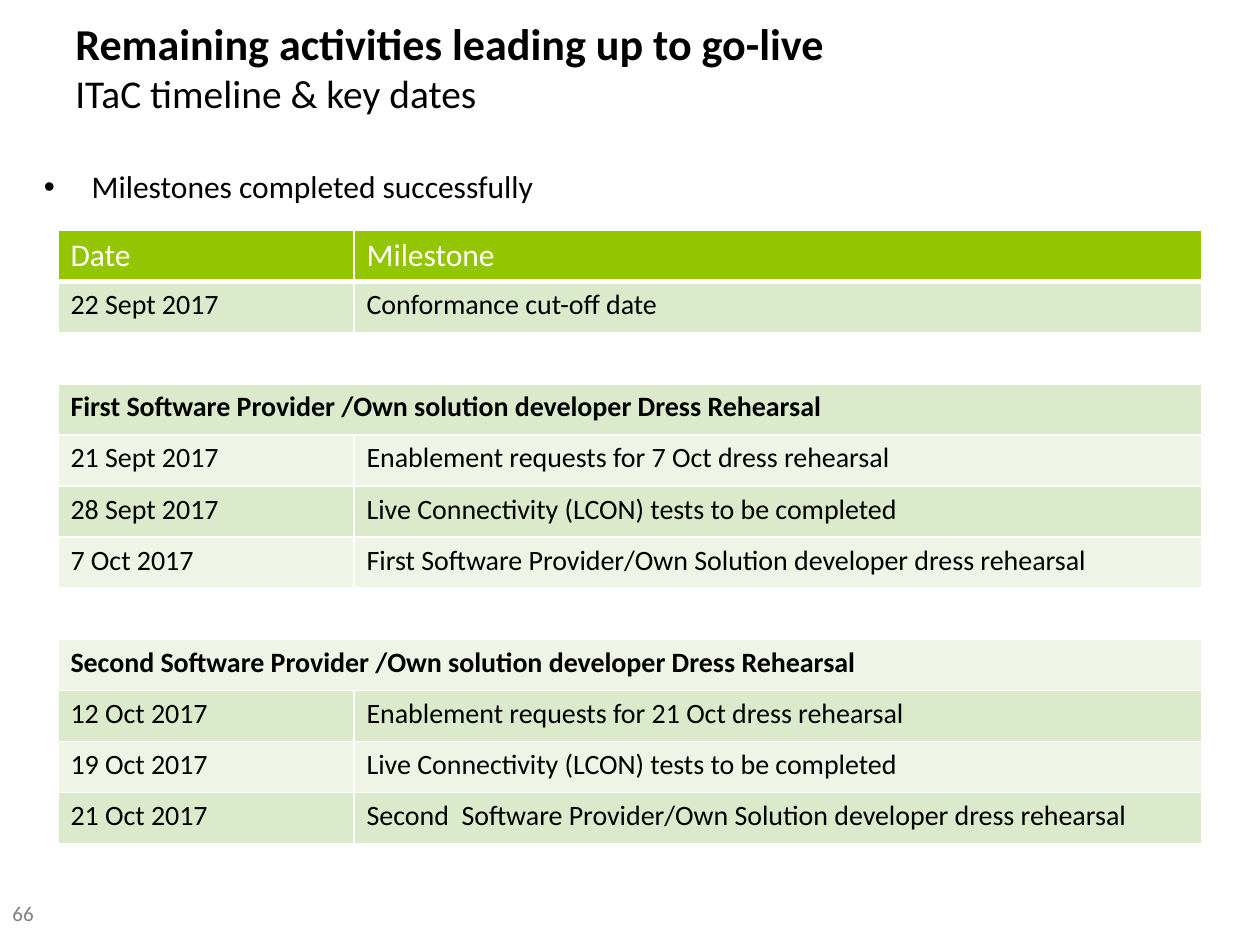
"""Build the go-live milestones slide with its title, bullet and date table."""
from lxml.etree import SubElement
from pptx import Presentation
from pptx.dml.color import RGBColor as Color
from pptx.enum.text import MSO_ANCHOR as Anchor, PP_ALIGN as Align
from pptx.oxml.ns import qn
from pptx.util import Inches, Pt

COLORS = {
    "text": "000000",
    "white": "FFFFFF",
    "page": "808080",
    "header": "94C600",
    "odd": "DCEACC",
    "even": "EEF5E7",
}
ROWS = [
    ("Date", "Milestone"),
    ("22 Sept 2017", "Conformance cut-off date"),
    (),
    ("First Software Provider /Own solution developer Dress Rehearsal",),
    ("21 Sept 2017", "Enablement requests for 7 Oct dress rehearsal"),
    ("28 Sept 2017", "Live Connectivity (LCON) tests to be completed"),
    ("7 Oct 2017", "First Software Provider/Own Solution developer dress rehearsal"),
    (),
    ("Second Software Provider /Own solution developer Dress Rehearsal",),
    ("12 Oct 2017", "Enablement requests for 21 Oct dress rehearsal"),
    ("19 Oct 2017", "Live Connectivity (LCON) tests to be completed"),
    ("21 Oct 2017", "Second  Software Provider/Own Solution developer dress rehearsal"),
]
COLUMN_WIDTHS = (2.35, 6.73)
TABLE_HEIGHT = 4.87


def add_run(paragraph, text, size, color="text", bold=False):
    run = paragraph.add_run()
    run.text = text
    run.font.name = "Calibri"
    run.font.size = Pt(size)
    run.font.bold = bold
    run.font.color.rgb = Color.from_string(COLORS[color])


def add_text_box(left, top, width, height, anchor=Anchor.TOP):
    box = slide.shapes.add_textbox(Inches(left), Inches(top), Inches(width), Inches(height))
    box.text_frame.word_wrap = True
    box.text_frame.vertical_anchor = anchor
    return box.text_frame.paragraphs[0]


presentation = Presentation()
presentation.slide_width = Inches(10)
presentation.slide_height = Inches(7.5)
slide = presentation.slides.add_slide(presentation.slide_layouts[6])

page_number = add_text_box(0, 7.1, 0.59, 0.4)
add_run(page_number, "66", 12, "page")

table_shape = slide.shapes.add_table(
    len(ROWS), len(COLUMN_WIDTHS), Inches(0.46), Inches(1.83),
    Inches(sum(COLUMN_WIDTHS)), Inches(TABLE_HEIGHT),
)
table = table_shape.table
for column, width in zip(table.columns, COLUMN_WIDTHS):
    column.width = Inches(width)

for row_index, texts in enumerate(ROWS):
    is_header = row_index == 0
    is_section = len(texts) == 1
    band = "odd" if row_index % 2 else "even"
    fill = "header" if is_header else band if texts else "white"
    table.rows[row_index].height = Inches(TABLE_HEIGHT / len(ROWS))
    for column_index in range(len(COLUMN_WIDTHS)):
        cell = table.cell(row_index, column_index)
        properties = cell._tc.get_or_add_tcPr()
        for side in "LRTB":
            points = 3 if is_header and side == "B" else 1
            border = SubElement(properties, qn(f"a:ln{side}"), w=str(Pt(points)))
            border_fill = SubElement(border, qn("a:solidFill"))
            SubElement(border_fill, qn("a:srgbClr"), val=COLORS["white"])
        cell.fill.solid()
        cell.fill.fore_color.rgb = Color.from_string(COLORS[fill])
    if is_section:
        table.cell(row_index, 0).merge(table.cell(row_index, 1))
    for column_index, text in enumerate(texts):
        paragraph = table.cell(row_index, column_index).text_frame.paragraphs[0]
        size, color = (18, "white") if is_header else (16, "text")
        add_run(paragraph, text, size, color, is_section)

bullet = add_text_box(0.25, 1.28, 9.33, 0.55)
bullet.alignment = Align.JUSTIFY
bullet_properties = bullet._p.get_or_add_pPr()
bullet_properties.set("marL", str(Inches(0.38)))
bullet_properties.set("indent", str(-Inches(0.38)))
SubElement(bullet_properties, qn("a:buFont"), typeface="Arial")
SubElement(bullet_properties, qn("a:buChar"), char="•")
add_run(bullet, "Milestones completed successfully", 18)

title = add_text_box(0.5, 0.08, 7.33, 0.89, Anchor.MIDDLE)
add_run(title, "Remaining activities leading up to go-live", 25.2, bold=True)
title.add_line_break()
add_run(title, "ITaC timeline & key dates", 22.5)

presentation.save("out.pptx")
